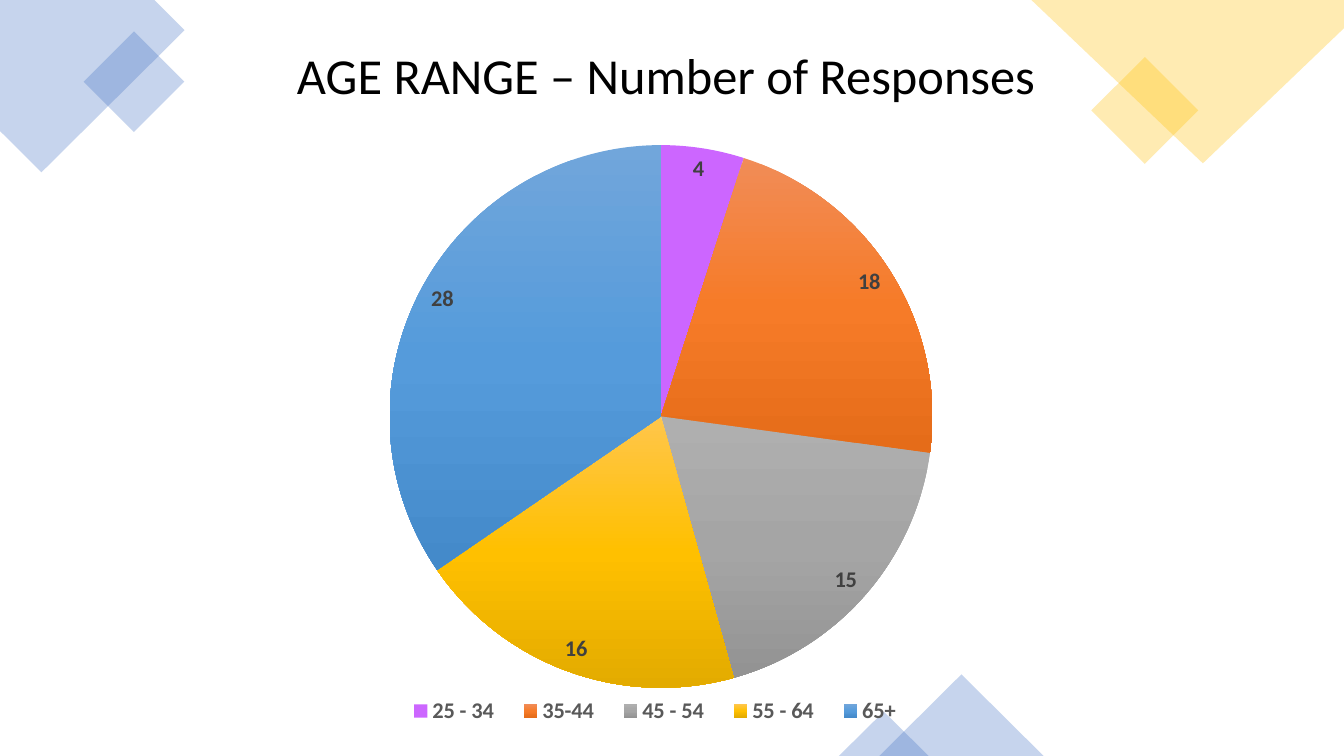
from copy import deepcopy

from lxml.etree import Element, SubElement
from pptx import Presentation
from pptx.chart.data import CategoryChartData
from pptx.dml.color import RGBColor
from pptx.enum.chart import XL_CHART_TYPE as ChartType
from pptx.enum.chart import XL_LABEL_POSITION as LabelPosition
from pptx.enum.chart import XL_LEGEND_POSITION as LegendPosition
from pptx.enum.shapes import MSO_SHAPE as Preset
from pptx.enum.text import MSO_ANCHOR as Anchor
from pptx.enum.text import PP_ALIGN as Align
from pptx.oxml.ns import qn
from pptx.util import Inches, Pt

WIDTH, HEIGHT = Inches(13.33), Inches(7.5)
FONT = "Calibri"
COLORS = {
    "blue": "4472C4", "gold": "FFC000", "title": "000000",
    "label": "404040", "legend": "595959",
}
RESPONSES = {
    "25 - 34 ": (4, ["CC66FF"]),
    "35-44 ": (18, ["F18C57", "F67B28", "E56C19"]),
    "45 - 54 ": (15, ["AFAFAF", "A5A5A5", "939393"]),
    "55 - 64 ": (16, ["FFC64B", "FFC000", "E3AB00"]),
    "65+": (28, ["71A6DB", "559BDB", "448ACA"]),
}


def across(percent):
    """Return a share of the slide width."""
    return round(WIDTH * percent / 100)


def down(percent):
    """Return a share of the slide height."""
    return round(HEIGHT * percent / 100)


def style_ornament(ornament, color):
    """Give a corner ornament its translucent fill and no outline."""
    ornament.shadow.inherit = False
    ornament.fill.solid()
    ornament.fill.fore_color.rgb = RGBColor.from_string(COLORS[color])
    tint = ornament.fill._xPr.find(".//" + qn("a:srgbClr"))
    SubElement(tint, qn("a:alpha"), val="30000")
    ornament.line.fill.background()


def add_corner(slide, corners, color):
    """Draw a polygon cut off by the slide edge."""
    points = [(across(x), down(y)) for x, y in corners]
    outline = slide.shapes.build_freeform(*points[0])
    outline.add_line_segments(points[1:], close=True)
    style_ornament(outline.convert_to_shape(), color)


def add_tilted_square(slide, left, top, side, color):
    """Draw a square standing on its corner."""
    square = slide.shapes.add_shape(
        Preset.RECTANGLE, across(left), down(top), across(side), across(side))
    square.rotation = 315
    style_ornament(square, color)


def add_peak(slide, left, width, height, color):
    """Draw a triangle standing on the bottom edge."""
    peak = slide.shapes.add_shape(
        Preset.ISOSCELES_TRIANGLE, across(left), down(100 - height),
        across(width), down(height))
    style_ornament(peak, color)


def style_font(font, size, color, bold=False):
    """Set the face, size, colour and weight of a font."""
    font.name, font.size, font.bold = FONT, Pt(size), bold
    font.color.rgb = RGBColor.from_string(COLORS[color])


def fill_slice(pie_slice, shades):
    """Fill a slice with one shade or a downward gradient of three."""
    fill = pie_slice.format.fill
    if len(shades) == 1:
        fill.solid()
        fill.fore_color.rgb = RGBColor.from_string(shades[0])
        return
    fill.gradient()
    fill.gradient_angle = 270
    stop_list = pie_slice.format._element.find(".//" + qn("a:gsLst"))
    stop_list.insert(1, deepcopy(stop_list[0]))
    for stop, shade, position in zip(fill.gradient_stops, shades, (0, 0.5, 1)):
        stop.color.rgb = RGBColor.from_string(shade)
        stop.position = position


def place_part(part, index, target, **percents):
    """Fix the place of a chart part in percent of the chart."""
    for old_layout in part.findall(qn("c:layout")):
        part.remove(old_layout)
    layout = Element(qn("c:layout"))
    manual = SubElement(layout, qn("c:manualLayout"))
    if target:
        SubElement(manual, qn("c:layoutTarget"), val=target)
    for side in "xy":
        SubElement(manual, qn(f"c:{side}Mode"), val="edge")
    for side, percent in percents.items():
        SubElement(manual, qn(f"c:{side}"), val=str(round(percent / 100, 4)))
    part.insert(index, layout)


def add_age_pie(slide):
    """Add the pie of responses by age range."""
    ages = CategoryChartData()
    ages.categories = list(RESPONSES)
    ages.add_series("Series 1", [count for count, _ in RESPONSES.values()])
    pie = slide.shapes.add_chart(
        ChartType.PIE, across(4.43), down(17.33), across(89.5), down(81.2), ages).chart
    pie.has_title = False
    pie.font.name, pie.font.size = FONT, Pt(10)
    pie.has_legend = True
    pie.legend.position = LegendPosition.BOTTOM
    pie.legend.include_in_layout = False
    style_font(pie.legend.font, 16, "legend", bold=True)
    plot = pie.plots[0]
    plot.vary_by_categories = True
    plot.has_data_labels = True
    labels = plot.data_labels
    labels.show_value = True
    labels.show_percentage = False
    labels.position = LabelPosition.BEST_FIT
    style_font(labels.font, 16, "label", bold=True)
    for index, (_, shades) in enumerate(RESPONSES.values()):
        fill_slice(plot.series[0].points[index], shades)
    plot_area = pie._chartSpace.find(".//" + qn("c:plotArea"))
    legend = pie._chartSpace.find(".//" + qn("c:legend"))
    place_part(plot_area, 0, "inner", x=27.4, y=2.3, w=45.2, h=88.4)
    place_part(legend, 1, None, x=28, y=91, w=43, h=7)


def add_title(slide, wording):
    """Add the centred slide title."""
    title = slide.shapes.add_textbox(across(14.25), down(5.2), across(71.49), down(9.47))
    frame = title.text_frame
    frame.word_wrap = True
    frame.vertical_anchor = Anchor.TOP
    frame.text = wording
    heading = frame.paragraphs[0]
    heading.alignment = Align.CENTER
    style_font(heading.runs[0].font, 36, "title")


def main():
    """Build and save the age range slide."""
    deck = Presentation()
    deck.slide_width, deck.slide_height = WIDTH, HEIGHT
    slide = deck.slides.add_slide(deck.slide_layouts[6])
    add_corner(slide, [(0, 0), (11.48, 0), (13.73, 4), (3.08, 22.8), (0, 17.33)], "blue")
    add_tilted_square(slide, 7.32, 6.1, 5.3, "blue")
    add_tilted_square(slide, 82.37, 9.6, 5.63, "gold")
    add_corner(slide, [(76.74, 0), (100, 0), (100, 3.73), (89.5, 21.6)], "gold")
    add_peak(slide, 65.42, 12.23, 10.8, "blue")
    add_peak(slide, 62.42, 6.68, 5.87, "blue")
    add_age_pie(slide)
    add_title(slide, "AGE RANGE – Number of Responses ")
    deck.save("out.pptx")


if __name__ == "__main__":
    main()
